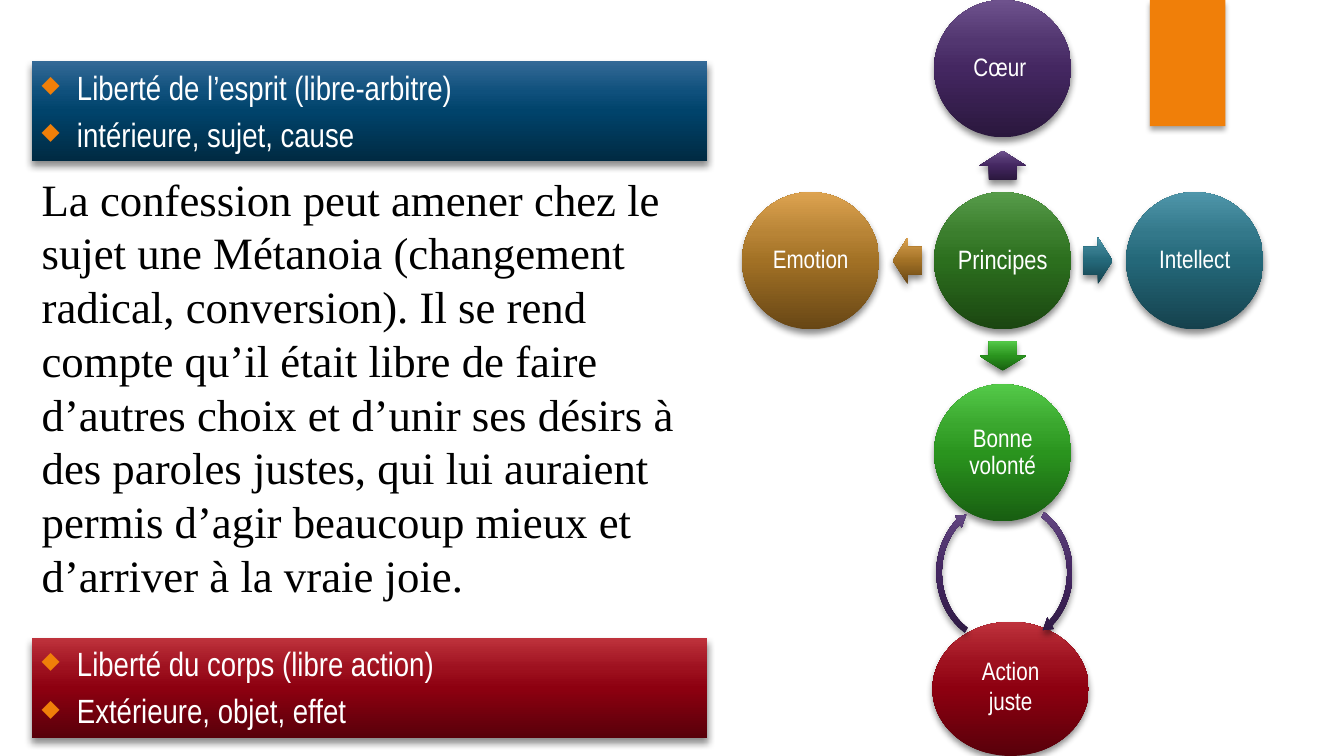
import pptx
import pptx.dml.color
import pptx.enum.shapes
import pptx.enum.text
import pptx.oxml
import pptx.oxml.ns
import pptx.util

Cm = pptx.util.Cm
Pt = pptx.util.Pt
RGBColor = pptx.dml.color.RGBColor
Shape = pptx.enum.shapes.MSO_SHAPE
Anchor = pptx.enum.text.MSO_ANCHOR
CENTER = pptx.enum.text.PP_ALIGN.CENTER
GROW = pptx.enum.text.MSO_AUTO_SIZE.SHAPE_TO_FIT_TEXT

BLACK = RGBColor(0x00, 0x00, 0x00)
WHITE = RGBColor(0xFF, 0xFF, 0xFF)
ORANGE = RGBColor(0xF0, 0x7F, 0x09)


def shades(*codes):
    return [RGBColor.from_string(code) for code in codes]


# Shades from the bottom of a shape to its top
GREEN = shades("1B4611", "2C6F1E", "3B7E2D", "579C4A")
PURPLE = shades("2A173D", "442761", "523670", "6E528D")
TEAL = shades("15414D", "246879", "33788A", "4F96AA")
LIME = shades("185E11", "2A941E", "3AA72E", "54CA49")
OCHRE = shades("674615", "A27125", "B88436", "DDA350")
RED = shades("58000A", "8D0010", "9E111F", "BE323C")
BLUE = shades("002A42", "00436B", "0F507C", "346A97")
STOPS = (0, 50, 70, 100)

NARROW = "Arial Narrow"
HUB_X, HUB_Y = 25.27, 6.57
DISC = 3.46
DISC_STEP = 4.84
ARROW_STEP = 2.4

# label, shades, horizontal and vertical direction, arrow rotation
BRANCHES = [
    ("Cœur ", PURPLE, 0, -1, 270),
    ("Intellect", TEAL, 1, 0, 0),
    ("Bonne volonté", LIME, 0, 1, 90),
    ("Emotion", OCHRE, -1, 0, 180),
]

BODY = (
    "La confession peut amener chez le sujet une Métanoia (changement radical, "
    "conversion). Il se rend compte qu’il était libre de faire d’autres choix et "
    "d’unir ses désirs à des paroles justes, qui lui auraient permis d’agir "
    "beaucoup mieux et d’arriver à la vraie joie."
)


def apply_format(target, values):
    for name, value in values.items():
        setattr(target, name, value)


def append_xml(parent, xml):
    declaration = pptx.oxml.ns.nsdecls("a")
    wrapper = pptx.oxml.parse_xml(f"<a:wrapper {declaration}>{xml}</a:wrapper>")
    parent.append(wrapper[0])


def write_span(para, text, size, font=NARROW, color=WHITE):
    span = para.add_run()
    span.text = text
    apply_format(span.font, {"name": font, "size": Pt(size)})
    span.font.color.rgb = color


def add_shadow(shape, opacity, blur):
    append_xml(
        shape._element.spPr,
        f'<a:effectLst><a:outerShdw blurRad="{Pt(blur)}" dist="{Pt(3)}" dir="5400000" '
        f'rotWithShape="0"><a:srgbClr val="000000"><a:alpha val="{opacity * 1000}"/>'
        "</a:srgbClr></a:outerShdw></a:effectLst>",
    )


def add_glossy(page, kind, left, top, width, height, colors, rotation=0):
    """Add a shape whose vertical gradient stays upright when it is rotated."""
    shape = page.shapes.add_shape(kind, Cm(left), Cm(top), Cm(width), Cm(height))
    shape.rotation = rotation
    stops = "".join(
        f'<a:gs pos="{stop * 1000}"><a:srgbClr val="{color}"/></a:gs>'
        for stop, color in zip(STOPS, colors)
    )
    append_xml(
        shape._element.spPr,
        f'<a:gradFill rotWithShape="0"><a:gsLst>{stops}</a:gsLst>'
        '<a:lin ang="16200000" scaled="0"/></a:gradFill>',
    )
    shape.line.fill.background()
    add_shadow(shape, 45, 5)
    return shape


def add_disc(page, label, colors, center_x, center_y, size=18):
    disc = add_glossy(page, Shape.OVAL, center_x - DISC / 2, center_y - DISC / 2,
                      DISC, DISC, colors)
    frame = disc.text_frame
    margins = ("margin_left", "margin_top", "margin_right", "margin_bottom")
    apply_format(frame, dict.fromkeys(margins, Cm(0.08)))
    apply_format(frame, {"word_wrap": True, "vertical_anchor": Anchor.MIDDLE})
    para = frame.paragraphs[0]
    apply_format(para, {"alignment": CENTER, "line_spacing": 0.9, "space_after": Pt(6)})
    write_span(para, label, size)


def add_block_arrow(page, colors, center_x, center_y, rotation):
    width, height = 0.74, 1.17
    arrow = add_glossy(page, Shape.RIGHT_ARROW, center_x - width / 2,
                       center_y - height / 2, width, height, colors, rotation)
    arrow.adjustments[0] = 0.6
    arrow.adjustments[1] = 0.5


def add_cycle_arrow(page, left, rotation):
    arrow = add_glossy(page, Shape.CIRCULAR_ARROW, left, 12.75, 3.81, 3.35,
                       PURPLE, rotation)
    for index, value in enumerate((0.042, 5.361, 192.884, 125.755, 0.05)):
        arrow.adjustments[index] = value


def add_action(page):
    action = add_glossy(page, Shape.OVAL, 23.5, 15.67, 3.94, 3.38, RED)
    apply_format(action.text_frame, {
        "word_wrap": True, "vertical_anchor": Anchor.TOP, "margin_top": Cm(0.34),
    })
    para = action.text_frame.paragraphs[0]
    para.alignment = CENTER
    write_span(para, "Action juste", 18)


def add_bullet(para):
    properties = para._p.get_or_add_pPr()
    properties.set("marL", str(Cm(0.89)))
    properties.set("indent", str(-Cm(0.89)))
    append_xml(properties, f'<a:buClr><a:srgbClr val="{ORANGE}"/></a:buClr>')
    append_xml(properties, '<a:buSzPct val="70000"/>')
    append_xml(properties, '<a:buChar char="◆"/>')


def add_banner(page, top, colors, lines):
    banner = add_glossy(page, Shape.RECTANGLE, 0.8, top, 17.02, 2.52, colors)
    frame = banner.text_frame
    apply_format(frame, {
        "word_wrap": True, "vertical_anchor": Anchor.TOP, "auto_size": GROW,
    })
    for index, line in enumerate(lines):
        para = frame.add_paragraph() if index else frame.paragraphs[0]
        add_bullet(para)
        apply_format(para, {
            "alignment": pptx.enum.text.PP_ALIGN.LEFT,
            "space_before": Pt(5 if index else 0),
        })
        write_span(para, line, 24)


def add_body(page):
    box = page.shapes.add_textbox(Cm(0.8), Cm(4.19), Cm(17.02), Cm(11.2))
    apply_format(box.text_frame, {"word_wrap": True, "auto_size": GROW})
    write_span(box.text_frame.paragraphs[0], BODY, 32, "Times New Roman", BLACK)


def add_corner_tab(page):
    tab = page.shapes.add_shape(Shape.RECTANGLE, Cm(28.98), 0, Cm(1.9), Cm(3.18))
    tab.fill.solid()
    tab.fill.fore_color.rgb = ORANGE
    tab.line.fill.background()
    add_shadow(tab, 35, 4)


def main():
    deck = pptx.Presentation()
    apply_format(deck, {"slide_width": Cm(33.87), "slide_height": Cm(19.05)})
    page = deck.slides.add_slide(deck.slide_layouts[6])
    add_corner_tab(page)
    add_disc(page, "Principes", GREEN, HUB_X, HUB_Y, size=19)
    for label, colors, across, down, rotation in BRANCHES:
        add_block_arrow(page, colors, HUB_X + across * ARROW_STEP,
                        HUB_Y + down * ARROW_STEP, rotation)
        add_disc(page, label, colors, HUB_X + across * DISC_STEP,
                 HUB_Y + down * DISC_STEP)
    add_action(page)
    add_cycle_arrow(page, 23.27, 270)
    add_body(page)
    add_banner(page, 16.08, RED,
               ["Liberté du corps (libre action)", "Extérieure, objet, effet"])
    add_banner(page, 1.55, BLUE,
               ["Liberté de l’esprit (libre-arbitre)", "intérieure, sujet, cause"])
    add_cycle_arrow(page, 23.55, 90)
    deck.save("out.pptx")


if __name__ == "__main__":
    main()
